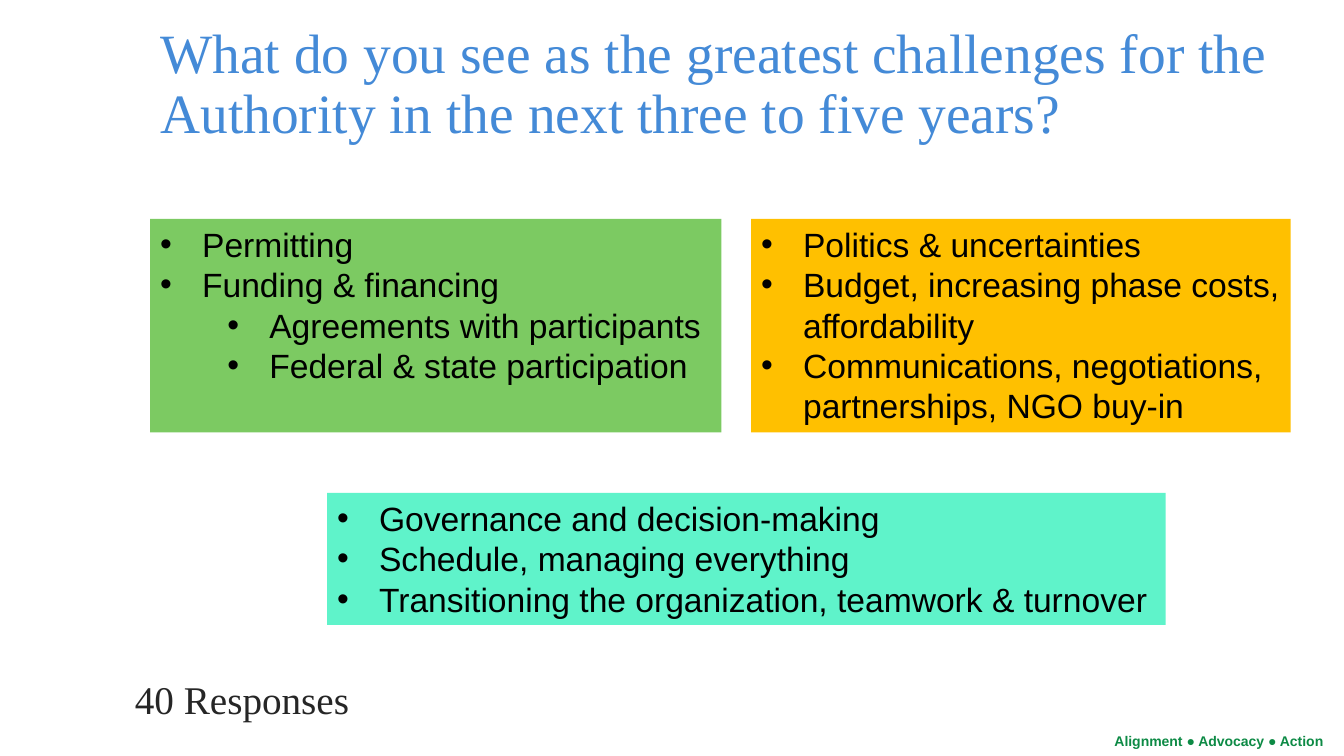
from pptx import Presentation
from pptx.dml.color import RGBColor
from pptx.enum.shapes import MSO_SHAPE
from pptx.enum.text import MSO_ANCHOR, MSO_AUTO_SIZE, PP_ALIGN
from pptx.oxml.ns import qn
from pptx.util import Pt
from lxml.etree import SubElement

SERIF = "Times New Roman"
SANS = "Arial"
INDENT = 30
SUB_INDENT = 78

CHALLENGES = [
    ((107.3, 156.3, 408, 152.6), "7CCA62", [
        (0, "Permitting"),
        (0, "Funding & financing"),
        (1, "Agreements with participants"),
        (1, "Federal & state participation"),
    ]),
    ((536.6, 156.3, 385.4, 152.6), "FFC000", [
        (0, "Politics & uncertainties"),
        (0, "Budget, increasing phase costs, affordability"),
        (0, "Communications, negotiations, partnerships, NGO buy-in"),
    ]),
    ((233.7, 352, 599, 94.3), "5FF3CA", [
        (0, "Governance and decision-making"),
        (0, "Schedule, managing everything"),
        (0, "Transitioning the organization, teamwork & turnover"),
    ]),
]


def color(value):
    """Return the colour for a hex string."""
    return RGBColor.from_string(value)


def set_font(para, name, size, value, bold=False):
    """Format a left-aligned paragraph in one font."""
    para.alignment = PP_ALIGN.LEFT
    para.font.name = name
    para.font.size = Pt(size)
    para.font.color.rgb = color(value)
    para.font.bold = bold


def set_bullet(para, level):
    """Give a paragraph a hanging round bullet."""
    para.level = level
    properties = para._p.get_or_add_pPr()
    properties.set("marL", str(Pt(SUB_INDENT if level else INDENT)))
    properties.set("indent", str(-Pt(INDENT)))
    SubElement(properties, qn("a:buFont")).set("typeface", SANS)
    SubElement(properties, qn("a:buChar")).set("char", "•")


def place_title(page, box, text):
    """Move the title placeholder into the box and format it."""
    title = page.shapes.title
    title.left, title.top, title.width, title.height = map(Pt, box)
    frame = title.text_frame
    frame.text = text
    frame.word_wrap = True
    frame.auto_size = MSO_AUTO_SIZE.NONE
    frame.vertical_anchor = MSO_ANCHOR.MIDDLE
    para = frame.paragraphs[0]
    para.line_spacing = 0.9
    set_font(para, SERIF, 39.6, "448AD7")


def add_challenges(page, box, fill, items):
    """Add a filled panel with a bulleted list."""
    panel = page.shapes.add_shape(MSO_SHAPE.RECTANGLE, *map(Pt, box))
    panel.shadow.inherit = False
    panel.fill.solid()
    panel.fill.fore_color.rgb = color(fill)
    panel.line.fill.background()
    frame = panel.text_frame
    frame.word_wrap = True
    frame.vertical_anchor = MSO_ANCHOR.TOP
    for index, (level, text) in enumerate(items):
        para = frame.add_paragraph() if index else frame.paragraphs[0]
        para.text = text
        set_bullet(para, level)
        set_font(para, SANS, 24, "000000")


def add_label(page, box, text, name, size, value, bold=False, spacing=1.0):
    """Add a single line of text in the box."""
    frame = page.shapes.add_textbox(*map(Pt, box)).text_frame
    frame.word_wrap = True
    para = frame.paragraphs[0]
    para.text = text
    para.line_spacing = spacing
    set_font(para, name, size, value, bold)


def main():
    """Build the slide and save the deck."""
    deck = Presentation()
    deck.slide_width, deck.slide_height = Pt(960), Pt(540)
    page = deck.slides.add_slide(deck.slide_layouts[5])
    add_label(page, (789, 519.8, 172, 19.4), "Alignment ● Advocacy ● Action",
              SANS, 10, "0D8A45", bold=True)
    place_title(page, (107.3, 13, 828, 95.8),
                "What do you see as the greatest challenges for the "
                "Authority in the next three to five years?")
    for box, fill, items in CHALLENGES:
        add_challenges(page, box, fill, items)
    add_label(page, (89.3, 482.4, 828, 38.2), "40 Responses",
              SERIF, 28, "262626", spacing=0.9)
    deck.save("out.pptx")


if __name__ == "__main__":
    main()
